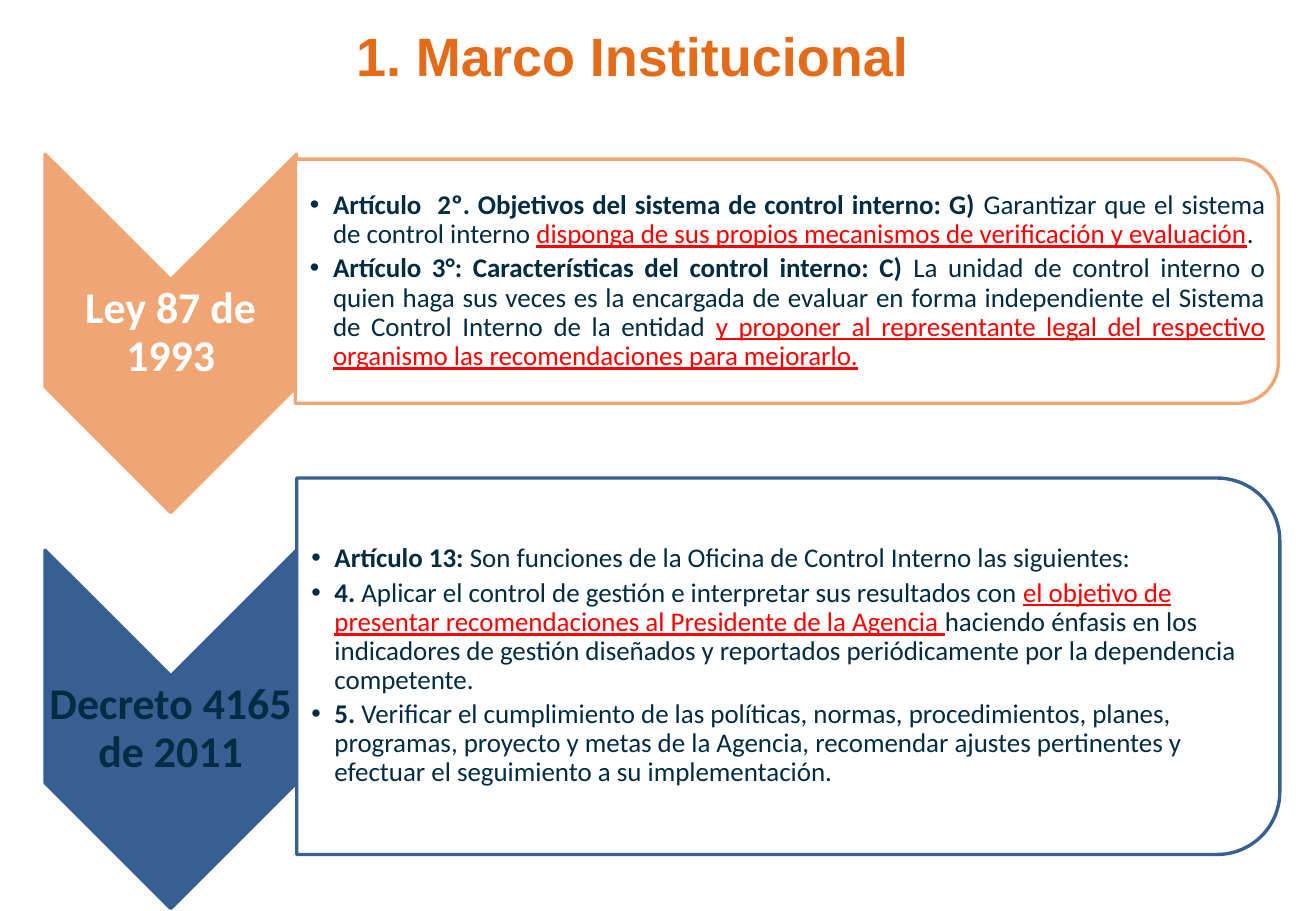
from lxml import etree
from pptx import Presentation, util as u
from pptx.dml import color
from pptx.enum import shapes, text
from pptx.oxml import ns

WIDTH, HEIGHT = u.Inches(10.83), u.Inches(7.5)
ORANGE, PEACH, BLUE = "E36B1A", "EFA674", "366092"
NAVY, RED, WHITE = "022B44", "FF0000", "FFFFFF"
CENTER, LEFT, JUSTIFY = text.PP_ALIGN.CENTER, text.PP_ALIGN.LEFT, text.PP_ALIGN.JUSTIFY

BODY_FONT = {"name": "Calibri", "size": u.Pt(16), "bold": False, "underline": False}
RUN_STYLES = {
    "lead": (BODY_FONT | {"bold": True}, NAVY),
    "plain": (BODY_FONT, NAVY),
    "key": (BODY_FONT | {"underline": True}, RED),
}

BANDS = [
    {
        "norm": "Ley 87 de 1993", "norm_color": WHITE, "accent": PEACH, "align": JUSTIFY,
        "arrow_top": 16.93, "card": (22.44, 17.47, 74.7, 26.8),
        "articles": [
            [("lead", "Artículo  2º. Objetivos del sistema de control interno: G) "),
             ("plain", "Garantizar que el sistema de control interno "),
             ("key", "disponga de sus propios mecanismos de verificación y evaluación"),
             ("plain", ".")],
            [("lead", "Artículo 3°: Características del control interno: C) "),
             ("plain", "La unidad de control interno o quien haga sus veces es la encargada de "
                       "evaluar en forma independiente el Sistema de Control Interno de la entidad "),
             ("key", "y proponer al representante legal del respectivo organismo las "
                     "recomendaciones para mejorarlo.")],
        ],
    },
    {
        "norm": "Decreto 4165 de 2011", "norm_color": NAVY, "accent": BLUE, "align": LEFT,
        "arrow_top": 60.4, "card": (22.55, 52.47, 74.7, 41.33),
        "articles": [
            [("lead", "Artículo 13: "),
             ("plain", "Son funciones de la Oficina de Control Interno las siguientes:")],
            [("lead", "4."),
             ("plain", " Aplicar el control de gestión e interpretar sus resultados con "),
             ("key", "el objetivo de presentar recomendaciones al Presidente de la Agencia "),
             ("plain", "haciendo énfasis en los indicadores de gestión diseñados y reportados "
                       "periódicamente por la dependencia competente.")],
            [("lead", "5."),
             ("plain", " Verificar el cumplimiento de las políticas, normas, procedimientos, "
                       "planes, programas, proyecto y metas de la Agencia, recomendar ajustes "
                       "pertinentes y efectuar el seguimiento a su implementación.")],
        ],
    },
]


def rgb(value):
    return color.RGBColor.from_string(value)


def apply(target, formats):
    for key, value in formats.items():
        setattr(target, key, value)


def box(left, top, width, height):
    return tuple(int(share * side / 100) for share, side in
                 zip((left, top, width, height), (WIDTH, HEIGHT, WIDTH, HEIGHT)))


def place(part, area):
    apply(part, dict(zip(("left", "top", "width", "height"), area)))


def set_frame(frame, left, other):
    apply(frame, {
        "word_wrap": True, "auto_size": text.MSO_AUTO_SIZE.NONE,
        "vertical_anchor": text.MSO_ANCHOR.MIDDLE, "margin_left": u.Inches(left),
        "margin_right": u.Inches(other), "margin_top": u.Inches(other),
        "margin_bottom": u.Inches(other),
    })


def add_run(paragraph, words, formats, shade):
    run = paragraph.add_run()
    run.text = words
    apply(run.font, formats)
    run.font.color.rgb = rgb(shade)


def add_turned(slide, kind, area, fill, line):
    left, top, width, height = area
    turned = slide.shapes.add_shape(
        kind, left + (width - height) // 2, top + (height - width) // 2, height, width)
    turned.rotation = 90
    turned.shadow.inherit = False
    turned.fill.solid()
    turned.fill.fore_color.rgb = rgb(fill)
    turned.line.color.rgb = rgb(line)
    turned.line.width = u.Pt(2)
    return turned


def add_heading(slide, area):
    heading = slide.shapes.title
    place(heading, area)
    set_frame(heading.text_frame, 0.1, 0.05)
    paragraph = heading.text_frame.paragraphs[0]
    paragraph.alignment = CENTER
    add_run(paragraph, "1. Marco Institucional",
            {"name": "Arial", "size": u.Pt(32), "bold": True}, ORANGE)


def add_norm(slide, area, norm, shade, accent):
    left, top, width, height = area
    add_turned(slide, shapes.MSO_SHAPE.CHEVRON, area, accent, accent)
    label = slide.shapes.add_textbox(left, top + int(height * 0.35), width, int(height * 0.3))
    set_frame(label.text_frame, 0.02, 0.02)
    paragraph = label.text_frame.paragraphs[0]
    apply(paragraph, {"alignment": CENTER, "line_spacing": 0.9})
    add_run(paragraph, norm, {"name": "Calibri", "size": u.Pt(26), "bold": True}, shade)


def add_articles(slide, area, body, articles, align, accent):
    left, top, width, height = area
    card = add_turned(slide, shapes.MSO_SHAPE.ROUND_2_SAME_RECTANGLE, area, WHITE, accent)
    tint = card.fill._xPr.find(".//" + ns.qn("a:srgbClr"))
    etree.SubElement(tint, ns.qn("a:alpha"), val="90000")

    inset = int(height / 6 * 0.29)
    place(body, (left, top + inset, width - inset, height - 2 * inset))
    slide.shapes._spTree.append(body._element)
    frame = body.text_frame
    set_frame(frame, 0.12, 0.01)
    for index, article in enumerate(articles):
        paragraph = frame.add_paragraph() if index else frame.paragraphs[0]
        apply(paragraph, {"alignment": align, "line_spacing": 0.9,
                          "space_before": u.Pt(0), "space_after": u.Pt(3)})
        properties = paragraph._p.get_or_add_pPr()
        properties.set("marL", str(u.Inches(0.19)))
        properties.set("indent", str(u.Inches(-0.19)))
        etree.SubElement(properties, ns.qn("a:buChar"), char="•")
        for style, words in article:
            add_run(paragraph, words, *RUN_STYLES[style])


def add_band(slide, body, band):
    add_norm(slide, box(3.42, band["arrow_top"], 19.11, 39.33),
             band["norm"], band["norm_color"], band["accent"])
    add_articles(slide, box(*band["card"]), body,
                 band["articles"], band["align"], band["accent"])


def main():
    deck = Presentation()
    apply(deck, {"slide_width": WIDTH, "slide_height": HEIGHT})
    slide = deck.slides.add_slide(deck.slide_layouts.get_by_name("Two Content"))
    bodies = [slide.placeholders[1], slide.placeholders[2]]
    add_heading(slide, box(12.19, 1.73, 71.28, 8.53))
    for body, band in zip(bodies, BANDS):
        add_band(slide, body, band)
    deck.save("out.pptx")


if __name__ == "__main__":
    main()
